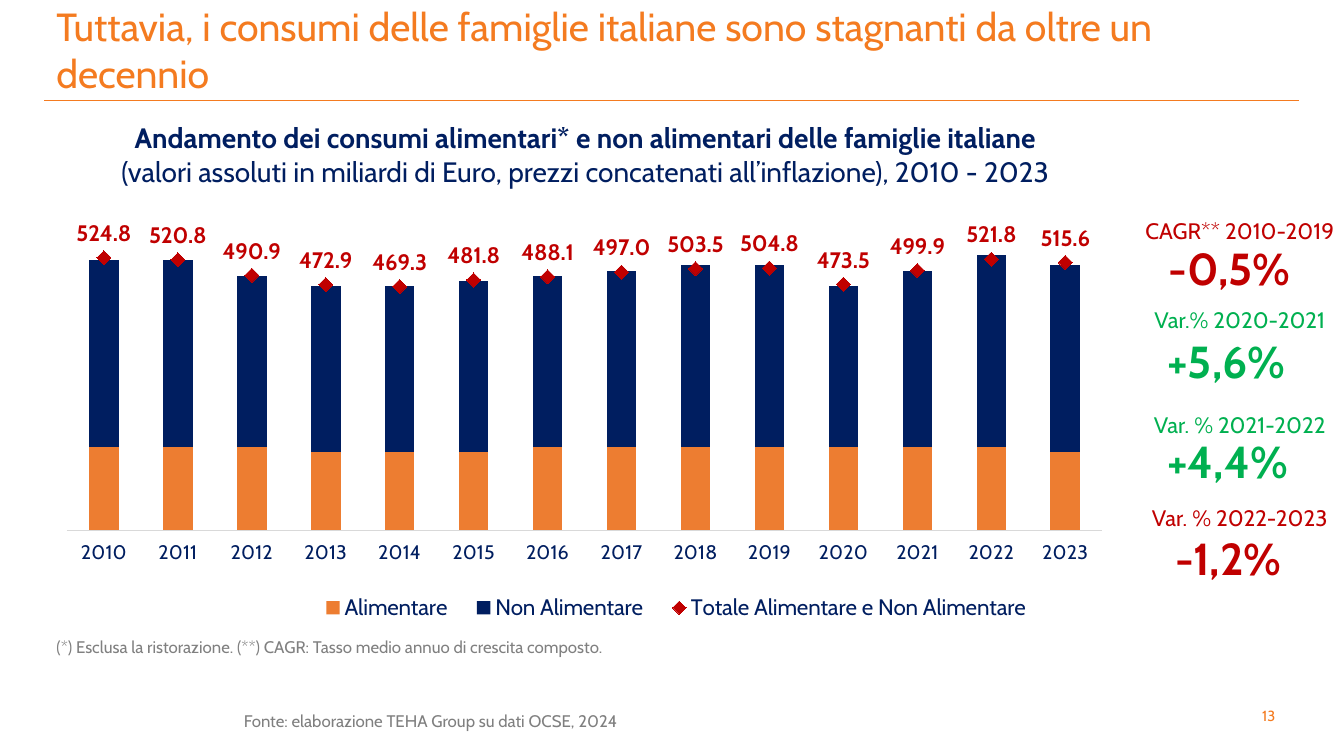
"""Build the slide on Italian household consumption."""
from dataclasses import dataclass

from lxml import etree
from pptx import Presentation
from pptx.chart.data import CategoryChartData
from pptx.dml.color import RGBColor as Color
from pptx.enum.chart import XL_CHART_TYPE as ChartType
from pptx.enum.chart import XL_LABEL_POSITION as LabelPosition
from pptx.enum.chart import XL_LEGEND_POSITION as LegendPosition
from pptx.enum.chart import XL_MARKER_STYLE as Marker
from pptx.enum.chart import XL_TICK_LABEL_POSITION as TickLabels
from pptx.enum.chart import XL_TICK_MARK as Tick
from pptx.enum.shapes import MSO_CONNECTOR as Connector
from pptx.enum.text import MSO_ANCHOR as Anchor
from pptx.enum.text import MSO_AUTO_SIZE as AutoSize
from pptx.enum.text import PP_ALIGN as Align
from pptx.oxml import parse_xml
from pptx.oxml.ns import nsdecls, qn
from pptx.util import Inches, Pt


@dataclass(frozen=True)
class Theme:
    """Fonts, colours, type sizes and the grid of the slide."""
    font: str = "Cabin"
    orange: str = "F47B20"
    food: str = "ED7D31"
    navy: str = "001E60"
    red: str = "C00000"
    green: str = "00B050"
    gray: str = "808080"
    source_gray: str = "7F7F7F"
    axis: str = "D9D9D9"
    title: float = 28
    figure: float = 32
    heading: float = 20
    label: float = 16
    category: float = 14
    note: float = 12
    number: float = 10.5
    columns: int = 160
    rows: int = 90


class SlideBuilder:
    """Hold the theme and the current slide, and add elements to it."""

    def __init__(self, deck, theme):
        """Open a title-only slide."""
        self.theme = theme
        self.page = deck.slides.add_slide(deck.slide_layouts[5])
        self.column = deck.slide_width / theme.columns
        self.row = deck.slide_height / theme.rows

    def place(self, left, top, width, height):
        """Turn grid columns and rows into lengths."""
        return (round(left * self.column), round(top * self.row),
                round(width * self.column), round(height * self.row))

    def style(self, font, size, color, bold=False):
        """Format one font."""
        font.name, font.size, font.bold = self.theme.font, Pt(size), bold
        font.color.rgb = Color.from_string(color)

    def title(self, text, area):
        """Fill and move the title placeholder."""
        box = self.page.shapes.title
        box.left, box.top, box.width, box.height = self.place(*area)
        frame = box.text_frame
        frame.text = text
        frame.word_wrap, frame.auto_size = True, AutoSize.NONE
        frame.vertical_anchor = Anchor.MIDDLE
        frame.paragraphs[0].alignment = Align.LEFT
        self.style(frame.paragraphs[0].runs[0].font, self.theme.title, self.theme.orange)

    def text(self, lines, area, size, color, align=Align.LEFT, bold_lines=0, inset=None):
        """Add a text box whose first lines may be bold."""
        frame = self.page.shapes.add_textbox(*self.place(*area)).text_frame
        frame.text = lines
        frame.word_wrap = True
        if inset:
            frame.margin_left = frame.margin_right = Inches(inset[0])
            frame.margin_top = frame.margin_bottom = Inches(inset[1])
        for index, para in enumerate(frame.paragraphs):
            para.alignment = align
            for span in para.runs:
                self.style(span.font, size, color, index < bold_lines)

    def rule(self, left, right, top, color):
        """Add a thin horizontal line."""
        x, y, width, _ = self.place(left, top, right - left, 0)
        line = self.page.shapes.add_connector(Connector.STRAIGHT, x, y, x + width, y)
        line.line.color.rgb = Color.from_string(color)
        line.line.width = Pt(0.5)
        etree.SubElement(line._element.spPr, qn("a:effectLst"))

    def clear(self, parent, tag):
        """Remove the children with one tag."""
        for child in parent.findall(qn(tag)):
            parent.remove(child)

    def layout(self, x, y, width, height, target=""):
        """Give the place of a chart part as shares of the chart."""
        sizes = "".join(f'<c:{tag} val="{share}"/>' for tag, share
                        in zip("xywh", (x, y, width, height)))
        return parse_xml(
            f'<c:layout {nsdecls("c")}><c:manualLayout>{target}<c:xMode val="edge"/>'
            f'<c:yMode val="edge"/>{sizes}</c:manualLayout></c:layout>')

    def split_total(self, chart):
        """Move the last column series into a line plot."""
        area = chart._chartSpace.chart.plotArea
        columns = area.find(qn("c:barChart"))
        total = columns.findall(qn("c:ser"))[-1]
        self.clear(total, "c:invertIfNegative")
        lines = parse_xml(f'<c:lineChart {nsdecls("c")}><c:grouping val="stacked"/>'
                          '<c:varyColors val="0"/><c:marker val="1"/></c:lineChart>')
        lines.insert(2, total)
        for axis in columns.findall(qn("c:axId")):
            etree.SubElement(lines, qn("c:axId")).set("val", axis.get("val"))
        columns.addnext(lines)
        self.clear(area, "c:layout")
        area.insert(0, self.layout(0.02, 0.02, 0.96, 0.725, '<c:layoutTarget val="inner"/>'))

    def chart(self, years, series, colors, area):
        """Add stacked columns with labelled markers for the total."""
        theme = self.theme
        data = CategoryChartData()
        data.categories = years
        for name, values in series.items():
            data.add_series(name, values)
        chart = self.page.shapes.add_chart(
            ChartType.COLUMN_STACKED, *self.place(*area), data).chart
        chart.has_title = False
        self.style(chart.font, theme.label, theme.navy)
        self.split_total(chart)
        columns, totals = chart.plots
        columns.gap_width, columns.overlap = 150, 100
        columns.vary_by_categories = False
        for part, color in zip(columns.series, colors):
            part.format.fill.solid()
            part.format.fill.fore_color.rgb = Color.from_string(color)

        total = totals.series[0]
        total.smooth = False
        total.format.line.fill.background()
        total.marker.style, total.marker.size = Marker.DIAMOND, 10
        total.marker.format.fill.solid()
        total.marker.format.fill.fore_color.rgb = Color.from_string(theme.red)
        total.marker.format.line.fill.background()
        labels = total.data_labels
        labels.show_value, labels.position = True, LabelPosition.ABOVE
        labels.number_format, labels.number_format_is_linked = "#,##0.0", False
        self.style(labels.font, theme.label, theme.red, True)

        scale = chart.value_axis
        scale.minimum_scale, scale.maximum_scale = 0, 600
        scale.has_major_gridlines = scale.visible = False
        base = chart.category_axis
        base.major_tick_mark = base.minor_tick_mark = Tick.NONE
        base.tick_label_position = TickLabels.LOW
        base.format.line.color.rgb = Color.from_string(theme.axis)
        base.format.line.width = Pt(0.75)
        self.style(base.tick_labels.font, theme.category, theme.navy)

        chart.has_legend = True
        legend = chart.legend
        legend.position, legend.include_in_layout = LegendPosition.BOTTOM, False
        self.style(legend.font, theme.label, theme.navy)
        self.clear(legend._element, "c:layout")
        legend._element.find(qn("c:legendPos")).addnext(self.layout(0.24, 0.85, 0.69, 0.15))


def main():
    """Build and save the deck."""
    deck = Presentation()
    deck.slide_width, deck.slide_height = Inches(13.33), Inches(7.5)
    theme = Theme()
    page = SlideBuilder(deck, theme)
    page.title("Tuttavia, i consumi delle famiglie italiane sono stagnanti da oltre un decennio",
               (5.5, 0, 150.3, 11.8))
    page.rule(5.3, 154.7, 12, theme.orange)
    page.text("13", (148.3, 83.5, 5.5, 3.5), theme.number, theme.orange, Align.CENTER)
    page.text("Andamento dei consumi alimentari* e non alimentari delle famiglie italiane\n"
              "(valori assoluti in miliardi di Euro, prezzi concatenati all’inflazione), 2010 - 2023",
              (2.2, 13.8, 135, 9.2), theme.heading, theme.navy, Align.CENTER, bold_lines=1)
    page.chart([str(year) for year in range(2010, 2024)], {
        "Alimentare": [160] * 3 + [150] * 3 + [160] * 7 + [150],
        "Non Alimentare": [360, 360, 330, 320, 320, 330, 330, 340, 350, 350, 310, 340, 370, 360],
        "Totale Alimentare e Non Alimentare": [
            524.8, 520.8, 490.9, 472.9, 469.3, 481.8, 488.1,
            497.0, 503.5, 504.8, 473.5, 499.9, 521.8, 515.6],
    }, (theme.food, theme.navy), (5.4, 25, 128.4, 51.2))
    for caption, figure, color, caption_top, left, top in (
            ("CAGR** 2010-2019", "-0,5%", theme.red, 25.3, 137.9, 28.1),
            ("Var.% 2020-2021", "+5,6%", theme.green, 35.9, 137.8, 39.1),
            ("Var. % 2021-2022", "+4,4%", theme.green, 48.4, 137.8, 51.1),
            ("Var. % 2022-2023", "-1,2%", theme.red, 59.4, 138.7, 62.6)):
        page.text(caption, (133.9, caption_top, 27.4, 4.4), theme.label, color, Align.CENTER)
        page.text(figure, (left, top, 19.4, 7.7), theme.figure, color, bold_lines=1)
    page.text("(*) Esclusa la ristorazione. (**) CAGR: Tasso medio annuo di crescita composto.",
              (5.4, 75.1, 138.1, 3.8), theme.note, theme.gray, inset=(0.11, 0.06))
    page.text("Fonte: elaborazione TEHA Group su dati OCSE, 2024",
              (27.7, 83.9, 114.1, 3.8), theme.note, theme.source_gray, inset=(0.11, 0.06))
    deck.save("out.pptx")


if __name__ == "__main__":
    main()
